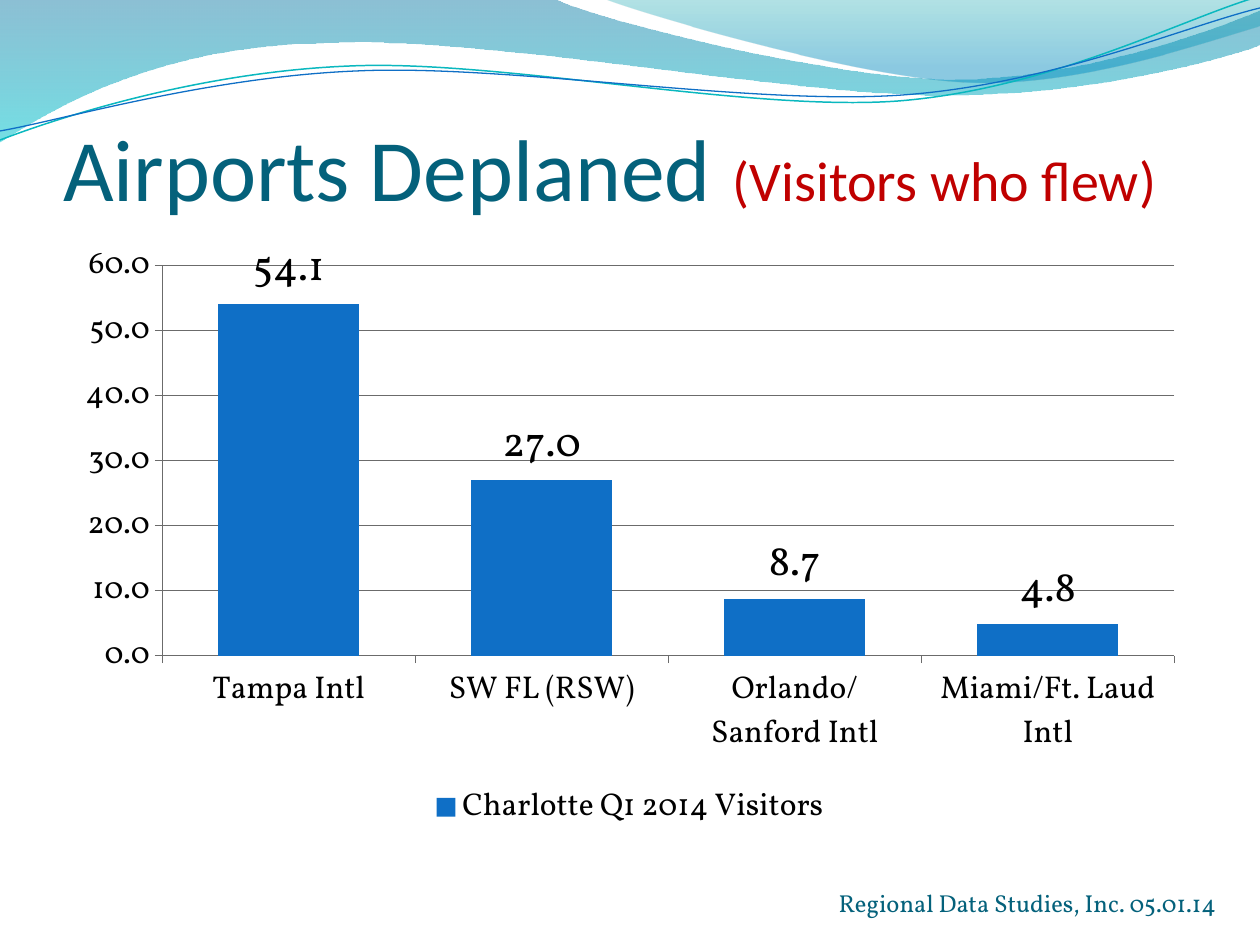
"""Build the slide on airports deplaned by visitors who flew."""
from dataclasses import dataclass

from lxml.etree import Element, SubElement
from pptx import Presentation
from pptx.chart.data import CategoryChartData
from pptx.dml.color import RGBColor
from pptx.enum.chart import XL_CHART_TYPE, XL_LABEL_POSITION, XL_LEGEND_POSITION, XL_TICK_MARK
from pptx.enum.text import MSO_ANCHOR, MSO_AUTO_SIZE, PP_ALIGN
from pptx.oxml.ns import qn
from pptx.util import Pt

SCALE = 914400 / 126


@dataclass(frozen=True)
class Theme:
    heading: str = "04617B"
    accent: str = "C00000"
    bar: str = "0F6FC6"
    teal: str = "0AB8BF"
    text: str = "000000"
    grid: str = "6B6B6B"
    title_font: str = "Calibri"
    body_font: str = "Vollkorn"
    title_size: int = 50
    gap_size: int = 54
    subtitle_size: int = 32
    chart_size: int = 18
    label_size: int = 24
    footer_size: int = 14


THEME = Theme()

TITLE_BOX = (63, 63, 1134, 157)
TITLE_RUNS = [
    ("Airports Deplaned", THEME.title_size, THEME.heading),
    (" ", THEME.gap_size, THEME.accent),
    ("(Visitors who flew)", THEME.subtitle_size, THEME.accent),
]
FOOTER_BOX = (798, 882, 431, 43)
FOOTER = "Regional Data Studies, Inc. 05.01.14"
CHART_BOX = (63, 231, 1134, 605)
SERIES_NAME = "Charlotte Q1 2014 Visitors"
AIRPORTS = {
    "Tampa Intl": 54.1,
    "SW FL (RSW)": 27.0,
    "Orlando/ Sanford Intl": 8.7,
    "Miami/Ft. Laud Intl": 4.8,
}

WAVES = [
    {
        "start": (0, 0),
        "segments": [
            [(554, -1)],
            [(600, 21), (837, 79), (955, 79)],
            [(1075, 79), (1207, 33), (1260, 11)],
            [(1261, 45)],
            [(1235, 55), (1096, 96), (940, 95)],
            [(784, 95), (481, 35), (324, 43)],
            [(163, 45), (58, 105), (-1, 142)],
            [(0, 0)],
        ],
        "stops": [(0, "0074A1", 45), (1, "00C6CF", 55)],
    },
    {
        "start": (604, -1),
        "segments": [
            [(641, 14), (859, 78), (969, 82)],
            [(1079, 87), (1211, 40), (1260, 26)],
            [(1260, 0)],
            [(604, -1)],
        ],
        "stops": [(0, "00A1A9", 30), (0.8, "008BBF", 45)],
    },
    {
        "start": (0, 140),
        "segments": [
            [(60, 117), (199, 72), (349, 66)],
            [(498, 59), (747, 112), (898, 101)],
            [(1050, 89), (1182, 19), (1257, -3)],
        ],
        "line": (THEME.teal, 0.85),
    },
    {
        "start": (0, 131),
        "segments": [
            [(59, 121), (207, 77), (357, 71)],
            [(508, 64), (752, 106), (903, 95)],
            [(1053, 84), (1186, 26), (1260, 8)],
        ],
        "line": (THEME.bar, 0.75),
    },
]


def px(value):
    return round(value * SCALE)


def box(lengths):
    return [px(length) for length in lengths]


def set_values(target, values):
    for name, value in values.items():
        setattr(target, name, value)


def set_font(font, name, size, color):
    set_values(font, {"name": name, "size": Pt(size)})
    font.color.rgb = RGBColor.from_string(color)


def set_line(line, color, width):
    line.color.rgb = RGBColor.from_string(color)
    line.width = Pt(width)


def bend_segments(shape, segments):
    edges = list(shape.element.spPr.iter(qn("a:lnTo")))
    for edge, segment in zip(edges, segments):
        if len(segment) == 1:
            continue
        curve = Element(qn("a:cubicBezTo"))
        for x, y in map(box, segment):
            SubElement(curve, qn("a:pt"), x=str(x - shape.left), y=str(y - shape.top))
        edge.getparent().replace(edge, curve)


def add_wave(slide, wave):
    builder = slide.shapes.build_freeform(*box(wave["start"]))
    builder.add_line_segments([box(segment[-1]) for segment in wave["segments"]], close="stops" in wave)
    shape = builder.convert_to_shape()
    bend_segments(shape, wave["segments"])
    shape.shadow.inherit = False
    if "line" in wave:
        shape.fill.background()
        set_line(shape.line, *wave["line"])
        return
    shape.line.fill.background()
    shape.fill.gradient()
    shape.fill.gradient_angle = 270
    for stop, (position, color, _) in zip(shape.fill.gradient_stops, wave["stops"]):
        stop.position = position
        stop.color.rgb = RGBColor.from_string(color)
    colors = list(shape.element.spPr.iter(qn("a:srgbClr")))
    for element, (_, _, opacity) in zip(colors, wave["stops"]):
        SubElement(element, qn("a:alpha"), val=str(opacity * 1000))


def add_title(slide):
    title = slide.shapes.title
    set_values(title, dict(zip(("left", "top", "width", "height"), box(TITLE_BOX))))
    set_values(title.text_frame, {
        "vertical_anchor": MSO_ANCHOR.BOTTOM, "auto_size": MSO_AUTO_SIZE.NONE, "word_wrap": True,
        "margin_left": 0, "margin_top": px(6), "margin_right": 0, "margin_bottom": 0,
    })
    paragraph = title.text_frame.paragraphs[0]
    paragraph.alignment = PP_ALIGN.LEFT
    for text, size, color in TITLE_RUNS:
        run = paragraph.add_run()
        run.text = text
        set_font(run.font, THEME.title_font, size, color)


def add_footer(slide):
    frame = slide.shapes.add_textbox(*box(FOOTER_BOX)).text_frame
    frame.word_wrap = True
    paragraph = frame.paragraphs[0]
    set_values(paragraph, {"text": FOOTER, "alignment": PP_ALIGN.RIGHT})
    set_font(paragraph.runs[0].font, THEME.body_font, THEME.footer_size, THEME.heading)


def add_airport_chart(slide):
    data = CategoryChartData(number_format="0.0")
    data.categories = list(AIRPORTS)
    data.add_series(SERIES_NAME, list(AIRPORTS.values()))
    chart = slide.shapes.add_chart(XL_CHART_TYPE.COLUMN_CLUSTERED, *box(CHART_BOX), data).chart
    set_values(chart, {"has_title": False, "has_legend": True})
    set_font(chart.font, THEME.body_font, THEME.chart_size, THEME.text)
    set_values(chart.legend, {"position": XL_LEGEND_POSITION.BOTTOM, "include_in_layout": False})
    plot = chart.plots[0]
    set_values(plot, {"gap_width": 80, "vary_by_categories": False, "has_data_labels": True})
    set_values(plot.data_labels, {
        "show_value": True, "position": XL_LABEL_POSITION.OUTSIDE_END,
        "number_format": "0.0", "number_format_is_linked": False,
    })
    set_font(plot.data_labels.font, THEME.body_font, THEME.label_size, THEME.text)
    fill = plot.series[0].format.fill
    fill.solid()
    fill.fore_color.rgb = RGBColor.from_string(THEME.bar)
    value_axis = chart.value_axis
    set_values(value_axis, {"minimum_scale": 0, "maximum_scale": 60, "major_unit": 10,
                            "has_major_gridlines": True})
    set_values(value_axis.tick_labels, {"number_format": "#,##0.0", "number_format_is_linked": False})
    for axis in (chart.category_axis, value_axis):
        axis.major_tick_mark = XL_TICK_MARK.OUTSIDE
    for part in (chart.category_axis, value_axis, value_axis.major_gridlines):
        set_line(part.format.line, THEME.grid, 0.75)


def main():
    presentation = Presentation()
    set_values(presentation, {"slide_width": px(1260), "slide_height": px(945)})
    slide = presentation.slides.add_slide(presentation.slide_layouts[5])
    for wave in WAVES:
        add_wave(slide, wave)
    add_footer(slide)
    add_title(slide)
    add_airport_chart(slide)
    presentation.save("out.pptx")


if __name__ == "__main__":
    main()
